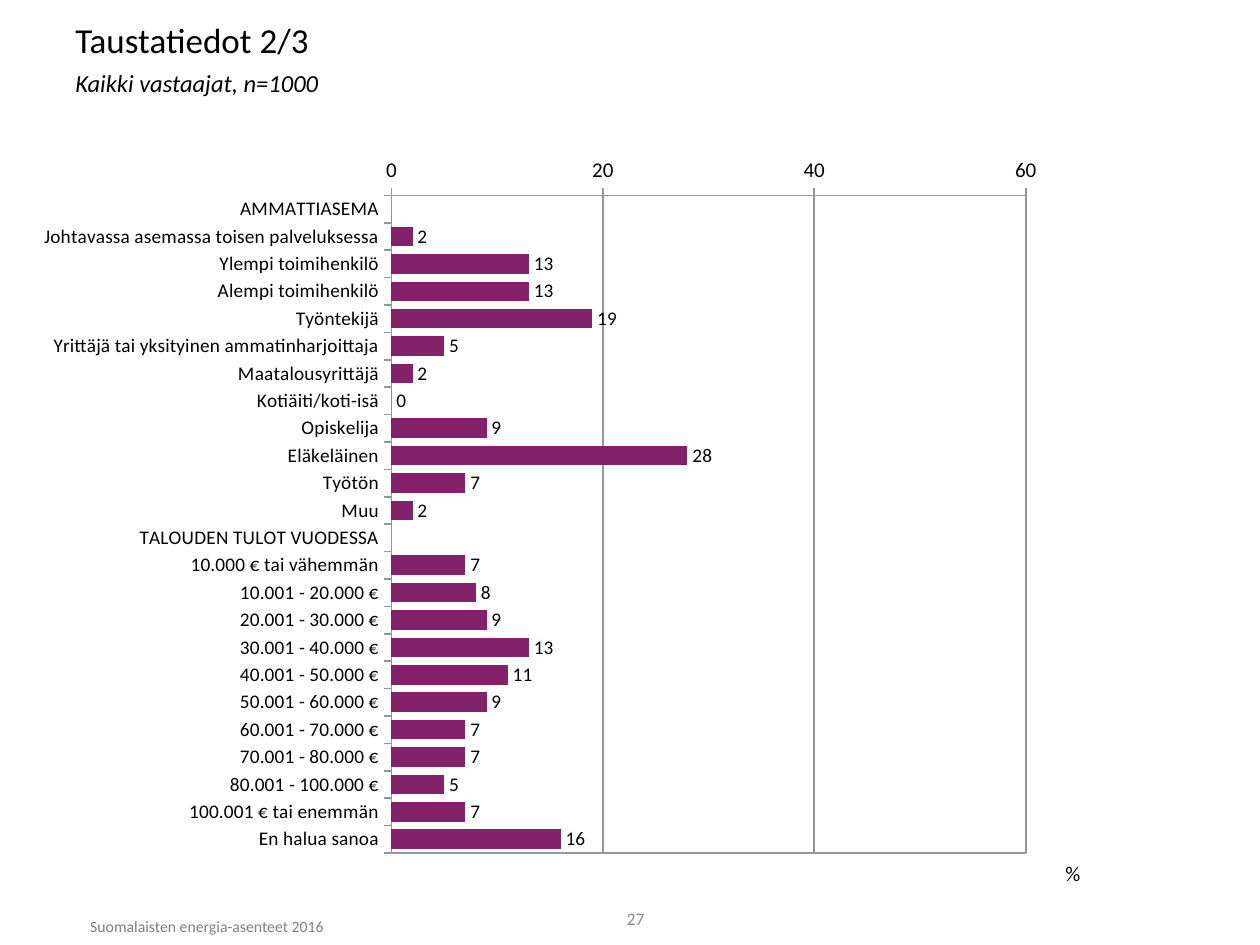
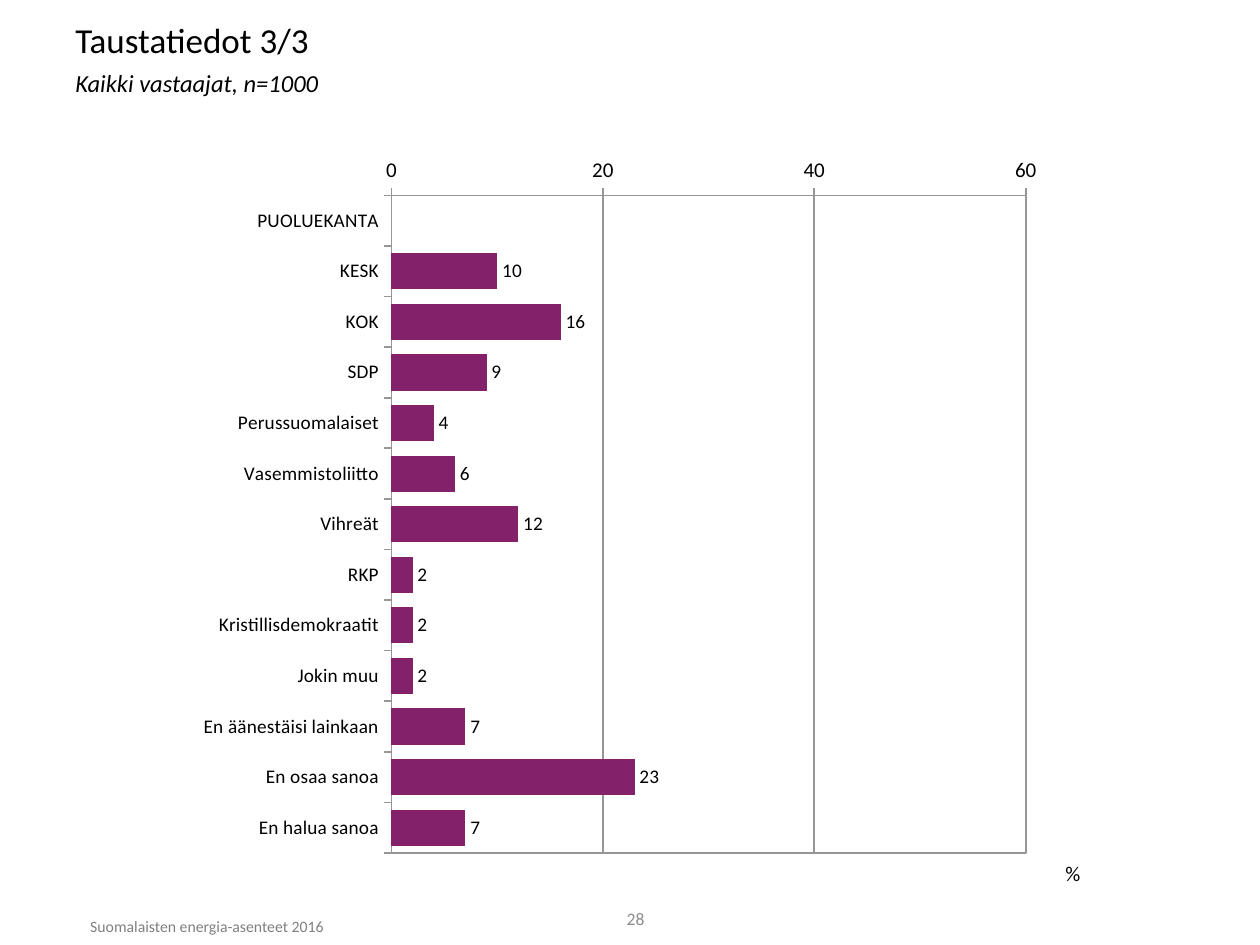
from pptx import Presentation
from pptx.chart.data import CategoryChartData
from pptx.dml.color import RGBColor
from pptx.enum.chart import (XL_AXIS_CROSSES, XL_CHART_TYPE, XL_LABEL_POSITION,
                             XL_TICK_LABEL_POSITION, XL_TICK_MARK)
from pptx.enum.text import MSO_ANCHOR, PP_ALIGN
from pptx.oxml import parse_xml
from pptx.oxml.ns import nsdecls, qn
from pptx.util import Cm, Pt

BAR = XL_CHART_TYPE.BAR_CLUSTERED
OUTSIDE_END = XL_LABEL_POSITION.OUTSIDE_END
LOW = XL_TICK_LABEL_POSITION.LOW
TICK_OUT = XL_TICK_MARK.OUTSIDE
TICK_NONE = XL_TICK_MARK.NONE
CROSS_MAX = XL_AXIS_CROSSES.MAXIMUM
MIDDLE = MSO_ANCHOR.MIDDLE
RIGHT = PP_ALIGN.RIGHT

FONT = "Calibri"
BLACK, PURPLE, GRID = "000000", "83216A", "969696"
FOOTER_GREY, NUMBER_GREY = "808080", "8C8C8C"
AXIS_WIDTH = Pt(0.92)

POSITION_AND_INCOME = [
    ("AMMATTIASEMA", None),
    ("Johtavassa asemassa toisen palveluksessa", 2),
    ("Ylempi toimihenkilö", 13),
    ("Alempi toimihenkilö", 13),
    ("Työntekijä", 19),
    ("Yrittäjä tai yksityinen ammatinharjoittaja", 5),
    ("Maatalousyrittäjä", 2),
    ("Kotiäiti/koti-isä", 0),
    ("Opiskelija", 9),
    ("Eläkeläinen", 28),
    ("Työtön", 7),
    ("Muu", 2),
    ("TALOUDEN TULOT VUODESSA", None),
    ("10.000 € tai vähemmän", 7),
    ("10.001 - 20.000 €", 8),
    ("20.001 - 30.000 €", 9),
    ("30.001 - 40.000 €", 13),
    ("40.001 - 50.000 €", 11),
    ("50.001 - 60.000 €", 9),
    ("60.001 - 70.000 €", 7),
    ("70.001 - 80.000 €", 7),
    ("80.001 - 100.000 €", 5),
    ("100.001 € tai enemmän", 7),
    ("En halua sanoa", 16),
]
PARTY = [
    ("PUOLUEKANTA", None),
    ("KESK", 10),
    ("KOK", 16),
    ("SDP", 9),
    ("Perussuomalaiset", 4),
    ("Vasemmistoliitto", 6),
    ("Vihreät", 12),
    ("RKP", 2),
    ("Kristillisdemokraatit", 2),
    ("Jokin muu", 2),
    ("En äänestäisi lainkaan", 7),
    ("En osaa sanoa", 23),
    ("En halua sanoa", 7),
]
SLIDES = [("Taustatiedot 2/3", "27", POSITION_AND_INCOME),
          ("Taustatiedot 3/3", "28", PARTY)]


def rgb(color):
    return RGBColor.from_string(color)


def set_attrs(target, **values):
    for name, value in values.items():
        setattr(target, name, value)


def set_font(font, size, color=BLACK, **values):
    set_attrs(font, name=FONT, size=Pt(size), **values)
    font.color.rgb = rgb(color)


def set_line(line):
    line.color.rgb = rgb(GRID)
    line.width = AXIS_WIDTH


def add_text(s, box, text, size, color=BLACK, anchor=None, align=None):
    tf = s.shapes.add_textbox(*map(Cm, box)).text_frame
    set_attrs(tf, word_wrap=True, vertical_anchor=anchor)
    p = tf.paragraphs[0]
    p.alignment = align
    r = p.add_run()
    r.text = text
    set_font(r.font, size, color)
    return p


def add_title(s, title, subtitle):
    p = add_text(s, (1.27, 0.36, 22.86, 3.18), title, 20)
    p.line_spacing = Pt(21)
    p.add_line_break()
    r = p.add_run()
    r.text = subtitle
    set_font(r.font, 14, italic=True)


def frame_plot(chart):
    plot_area = chart.element.find(".//" + qn("c:plotArea"))
    for layout in plot_area.findall(qn("c:layout")):
        plot_area.remove(layout)
    place = {"x": 0.327, "y": 0.053, "w": 0.53, "h": 0.857}
    modes = "".join(f'<c:{k}Mode val="edge"/>' for k in "xy")
    sizes = "".join(f'<c:{k} val="{v}"/>' for k, v in place.items())
    plot_area.insert(0, parse_xml(
        f'<c:layout {nsdecls("c")}><c:manualLayout><c:layoutTarget val="inner"/>'
        f'{modes}{sizes}</c:manualLayout></c:layout>'))
    plot_area.append(parse_xml(
        f'<c:spPr {nsdecls("c", "a")}><a:noFill/><a:ln w="{AXIS_WIDTH}"><a:solidFill>'
        f'<a:srgbClr val="{GRID}"/></a:solidFill></a:ln></c:spPr>'))


def add_bar_chart(s, rows):
    data = CategoryChartData()
    data.categories = [label for label, _ in rows]
    data.add_series("Series 1", [value for _, value in rows])
    box = map(Cm, (0, 3.12, 24.13, 15.47))
    chart = s.shapes.add_chart(BAR, *box, data).chart
    set_attrs(chart, has_title=False, has_legend=False)
    set_font(chart.font, 11)

    plot = chart.plots[0]
    set_attrs(plot, gap_width=40, vary_by_categories=False, has_data_labels=True)
    set_attrs(plot.data_labels, show_value=True, position=OUTSIDE_END,
              number_format="#,##0", number_format_is_linked=False)
    set_font(plot.data_labels.font, 11)
    fill = plot.series[0].format.fill
    fill.solid()
    fill.fore_color.rgb = rgb(PURPLE)

    cat, val = chart.category_axis, chart.value_axis
    for axis, size in ((cat, 11), (val, 12)):
        set_attrs(axis, major_tick_mark=TICK_OUT, minor_tick_mark=TICK_NONE)
        set_line(axis.format.line)
        set_font(axis.tick_labels.font, size)
    set_attrs(cat, reverse_order=True, tick_label_position=LOW, crosses=CROSS_MAX)
    set_attrs(val, minimum_scale=0, maximum_scale=60, major_unit=20,
              has_major_gridlines=True)
    set_line(val.major_gridlines.format.line)
    frame_plot(chart)


def main():
    prs = Presentation()
    set_attrs(prs, slide_width=Cm(25.4), slide_height=Cm(19.05))
    for title, number, rows in SLIDES:
        s = prs.slides.add_slide(prs.slide_layouts[6])
        add_text(s, (1.57, 18.36, 6.07, 0.64),
                 "Suomalaisten energia-asenteet 2016", 9, FOOTER_GREY)
        add_bar_chart(s, rows)
        add_text(s, (7.32, 18.01, 5.92, 1.02), number, 10, NUMBER_GREY, MIDDLE, RIGHT)
        add_text(s, (21.23, 17.22, 1.22, 0.76), "%", 12)
        add_title(s, title, "Kaikki vastaajat, n=1000")
    prs.save("out.pptx")


if __name__ == "__main__":
    main()
